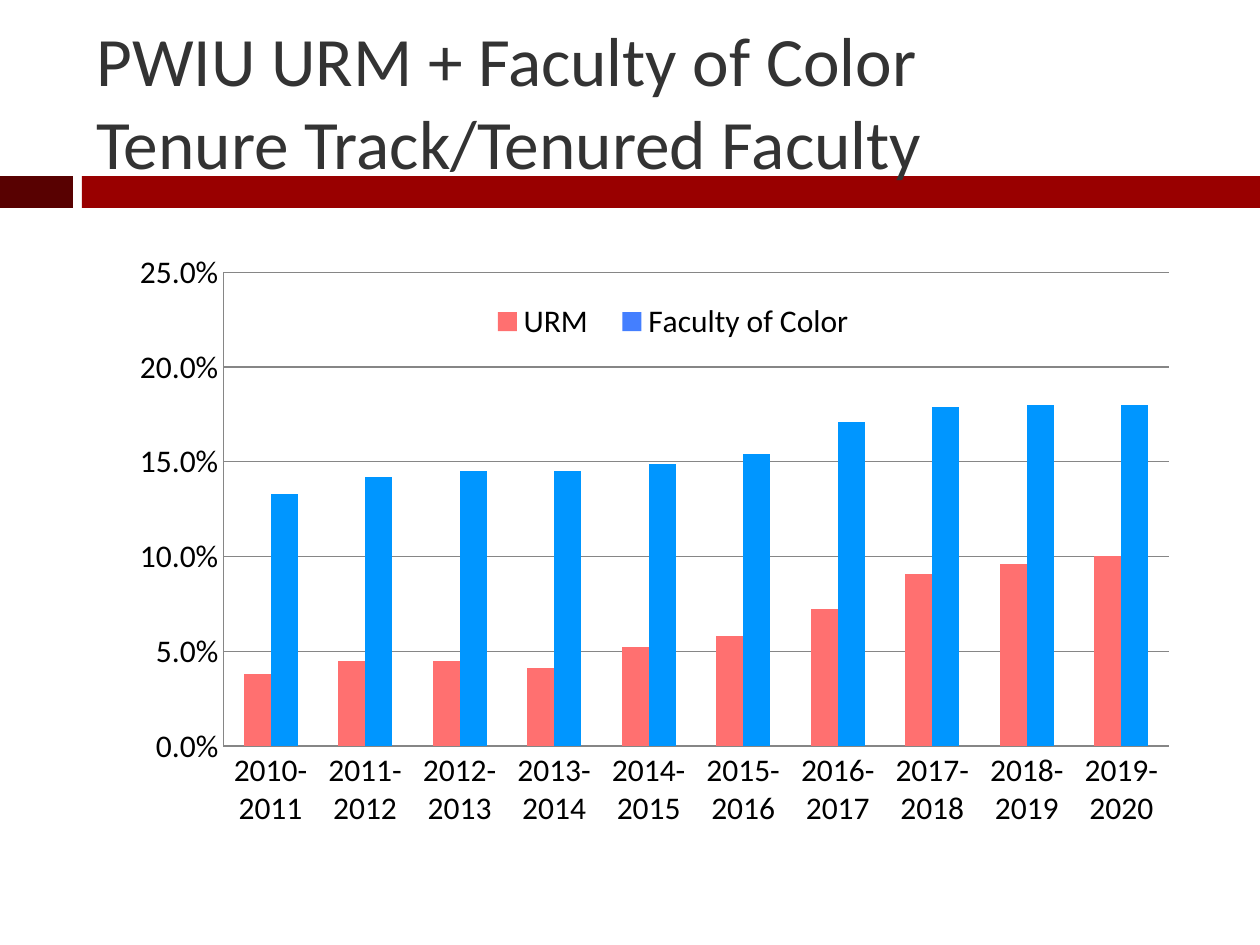
from dataclasses import dataclass

from lxml.etree import SubElement
from pptx import Presentation
from pptx.chart.data import CategoryChartData
from pptx.dml.color import RGBColor
from pptx.enum.chart import XL_CHART_TYPE, XL_LEGEND_POSITION, XL_TICK_MARK
from pptx.enum.shapes import MSO_SHAPE
from pptx.enum.text import MSO_ANCHOR, PP_ALIGN
from pptx.oxml.ns import qn
from pptx.util import Pt

SCALE = 914400 / 126


@dataclass(frozen=True)
class Theme:
    """Hold the colours and type sizes of the slide."""
    font: str = "Calibri"
    title: str = "333333"
    text: str = "000000"
    dark: str = "580101"
    red: str = "990000"
    urm: str = "FF7070"
    key: str = "447FFF"
    bar: str = "0096FF"
    rule: str = "868686"
    head: float = 39.6
    body: float = 18


THEME = Theme()
TITLE = "PWIU URM + Faculty of Color\vTenure Track/Tenured Faculty"
YEARS = [f"{year}-{year + 1}" for year in range(2010, 2020)]
URM = [0.038, 0.045, 0.045, 0.041, 0.052, 0.058, 0.072, 0.091, 0.096, 0.1]
COLOR = [0.133, 0.142, 0.145, 0.145, 0.149, 0.154, 0.171, 0.179, 0.18, 0.18]


def px(*sizes):
    """Turn pixels into EMU."""
    return [round(size * SCALE) for size in sizes]


def paint(fill, color):
    """Give a fill one solid colour."""
    fill.solid()
    fill.fore_color.rgb = RGBColor.from_string(color)


def style(font, size, color):
    """Set the face, size and colour of a font."""
    font.name = THEME.font
    font.size = Pt(size)
    font.color.rgb = RGBColor.from_string(color)


def add_band(slide, box, color):
    """Add a plain band under the title."""
    band = slide.shapes.add_shape(MSO_SHAPE.RECTANGLE, *px(*box))
    band.shadow.inherit = False
    paint(band.fill, color)
    band.line.fill.background()


def add_title(slide, box, text):
    """Add the slide title, centred on its height."""
    frame = slide.shapes.add_textbox(*px(*box)).text_frame
    frame.word_wrap = True
    frame.vertical_anchor = MSO_ANCHOR.MIDDLE
    para = frame.paragraphs[0]
    para.text = text
    para.alignment = PP_ALIGN.LEFT
    for run in para.runs:
        style(run.font, THEME.head, THEME.title)


def place(node, after, box, inner=False):
    """Fix a chart part at fractions of the chart area."""
    for old in node.findall(qn("c:layout")):
        node.remove(old)
    layout = SubElement(node, qn("c:layout"))
    if after is None:
        node.insert(0, layout)
    else:
        after.addnext(layout)
    manual = SubElement(layout, qn("c:manualLayout"))
    rules = [("layoutTarget", "inner")] if inner else []
    rules += [("xMode", "edge"), ("yMode", "edge")]
    rules += zip("xywh", map(str, box))
    for tag, value in rules:
        SubElement(manual, qn(f"c:{tag}")).set("val", value)


def set_axis(axis):
    """Draw an axis as a thin line without ticks."""
    axis.major_tick_mark = XL_TICK_MARK.NONE
    axis.minor_tick_mark = XL_TICK_MARK.NONE
    axis.format.line.color.rgb = RGBColor.from_string(THEME.rule)
    axis.format.line.width = Pt(0.75)
    style(axis.tick_labels.font, THEME.body, THEME.text)


def set_scale(axis):
    """Set the range, grid and number format of the value axis."""
    axis.minimum_scale, axis.maximum_scale = 0, 0.25
    axis.major_unit = 0.05
    axis.has_major_gridlines = True
    grid = axis.major_gridlines.format.line
    grid.color.rgb = RGBColor.from_string(THEME.rule)
    grid.width = Pt(0.75)
    axis.tick_labels.number_format = "0.0%"
    axis.tick_labels.number_format_is_linked = False


def set_key(chart):
    """Lay the legend over the top of the plot."""
    chart.has_legend = True
    key = chart.legend
    key.position = XL_LEGEND_POSITION.RIGHT
    key.include_in_layout = False
    style(key.font, THEME.body, THEME.text)
    node = chart.element.find(".//" + qn("c:legend"))
    place(node, node.find(qn("c:legendPos")), (0.33, 0.07, 0.35, 0.09))


def add_bars(slide, box):
    """Add the clustered columns of faculty shares by year."""
    data = CategoryChartData(number_format="0.0%")
    data.categories = YEARS
    data.add_series("URM", URM)
    data.add_series("Faculty of Color", COLOR)
    kind = XL_CHART_TYPE.COLUMN_CLUSTERED
    chart = slide.shapes.add_chart(kind, *px(*box), data).chart
    chart.has_title = False
    style(chart.font, THEME.body, THEME.text)
    plot = chart.plots[0]
    plot.gap_width, plot.overlap = 150, 0
    plot.vary_by_categories = False
    for series, color in zip(plot.series, (THEME.urm, THEME.key)):
        paint(series.format.fill, color)
    for spot in range(len(YEARS)):
        paint(plot.series[1].points[spot].format.fill, THEME.bar)
    set_axis(chart.category_axis)
    set_axis(chart.value_axis)
    set_scale(chart.value_axis)
    set_key(chart)
    area = chart.element.find(".//" + qn("c:plotArea"))
    place(area, None, (0.11, 0.04, 0.83, 0.72), inner=True)


def main():
    """Build the slide and save it."""
    deck = Presentation()
    deck.slide_width, deck.slide_height = px(1260, 945)
    slide = deck.slides.add_slide(deck.slide_layouts[6])
    add_band(slide, (0, 176, 73, 32), THEME.dark)
    add_band(slide, (82, 176, 1178, 32), THEME.red)
    add_title(slide, (84, 32, 1124, 136), TITLE)
    add_bars(slide, (98, 246, 1139, 658))
    deck.save("out.pptx")


if __name__ == "__main__":
    main()
